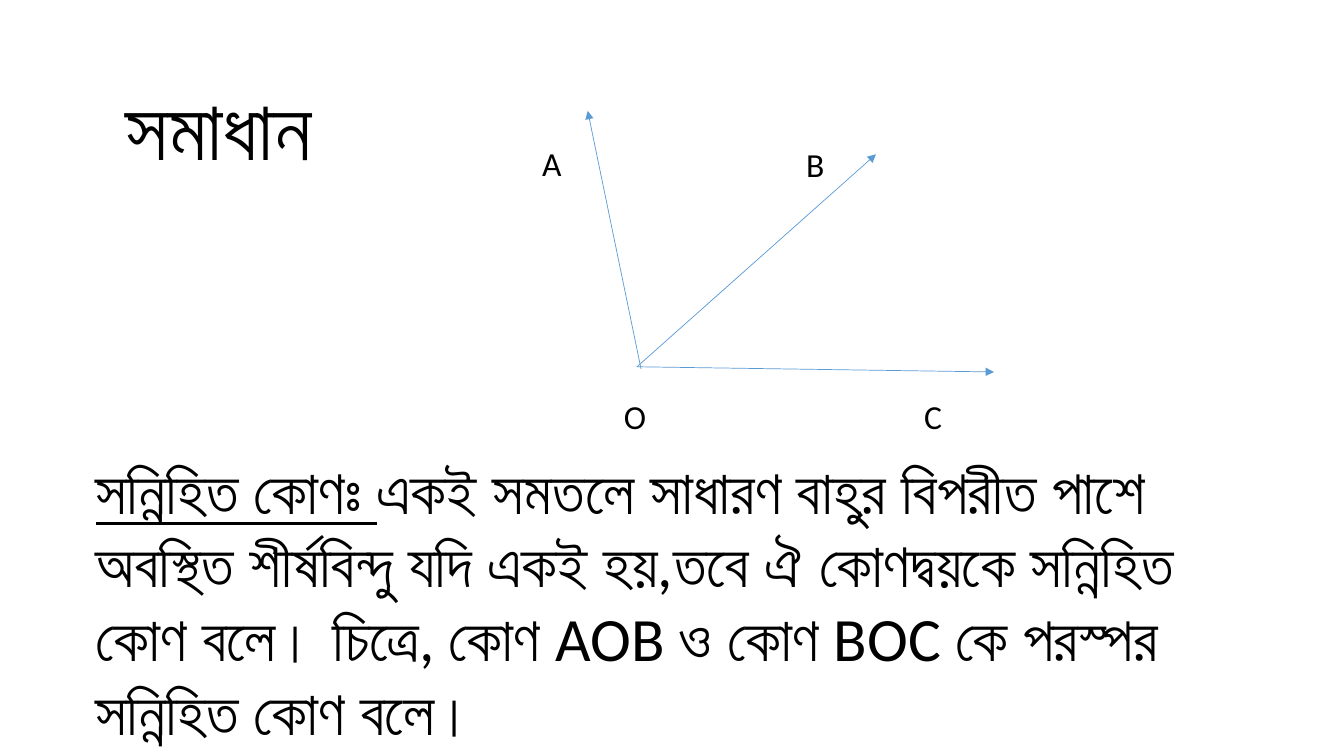
import pptx
import pptx.util
import pptx.dml.color
import pptx.enum.shapes
import pptx.oxml
import pptx.oxml.ns
import lxml.etree

Pt = pptx.util.Pt
BLACK = pptx.dml.color.RGBColor(0, 0, 0)
BLUE = pptx.dml.color.RGBColor(0x5B, 0x9B, 0xD5)
FONT = "Calibri"

TITLE = "সমাধান"
TERM = "সন্নিহিত কোণঃ "
MEANING = (
    "একই সমতলে সাধারণ বাহুর বিপরীত পাশে অবস্থিত শীর্ষবিন্দু যদি একই হয়,"
    "তবে ঐ কোণদ্বয়কে সন্নিহিত কোণ বলে। চিত্রে, কোণ AOB ও কোণ BOC কে "
    "পরস্পর সন্নিহিত কোণ বলে।"
)
RAYS = [
    ((75, 183), (330, 186.7)),
    ((77.9, 184.5), (39.8, 0.2)),
    ((75, 183), (245.7, 31.2)),
]
LABELS = [
    ("A", 0.2, 19.6, 42.5),
    ("B", 188.8, 20.4, 38.2),
    ("O", 58.5, 200.4, 77.8),
    ("C", 273, 200.4, 57.6),
]


def add_text(slide, box, size, *parts):
    shape = slide.shapes.add_textbox(*map(Pt, box))
    frame = shape.text_frame
    frame.word_wrap = True
    line = frame.paragraphs[0]
    for part in parts:
        line.add_run().text = part
    line.font.name = FONT
    line.font.size = Pt(size)
    line.font.color.rgb = BLACK
    return line


def add_ray(slide, start, end):
    ray = slide.shapes.add_connector(
        pptx.enum.shapes.MSO_CONNECTOR.STRAIGHT, *map(Pt, start + end)
    )
    ray.line.color.rgb = BLUE
    ray.line.width = Pt(0.5)
    qn = pptx.oxml.ns.qn
    tip = lxml.etree.SubElement(ray.line._get_or_add_ln(), qn("a:tailEnd"))
    tip.set("type", "triangle")
    lxml.etree.SubElement(ray._element.spPr, qn("a:effectLst"))


def add_figure(slide, left, top):
    for start, end in RAYS:
        add_ray(
            slide,
            (left + start[0], top + start[1]),
            (left + end[0], top + end[1]),
        )
    for name, x, y, width in LABELS:
        add_text(slide, (left + x, top + y, width, 36), 24, name)


def add_meaning(slide, box):
    line = add_text(slide, box, 44, TERM, MEANING)
    line.runs[0].font.underline = True


def main():
    deck = pptx.Presentation()
    deck.slide_width, deck.slide_height = Pt(960), Pt(540)
    slide = deck.slides.add_slide(deck.slide_layouts[6])
    add_text(slide, (82.8, 51.1, 185.8, 79.9), 60, TITLE)
    add_figure(slide, 380, 79)
    add_meaning(slide, (61.2, 319.7, 855.4, 220.3))
    deck.save("out.pptx")


if __name__ == "__main__":
    main()
